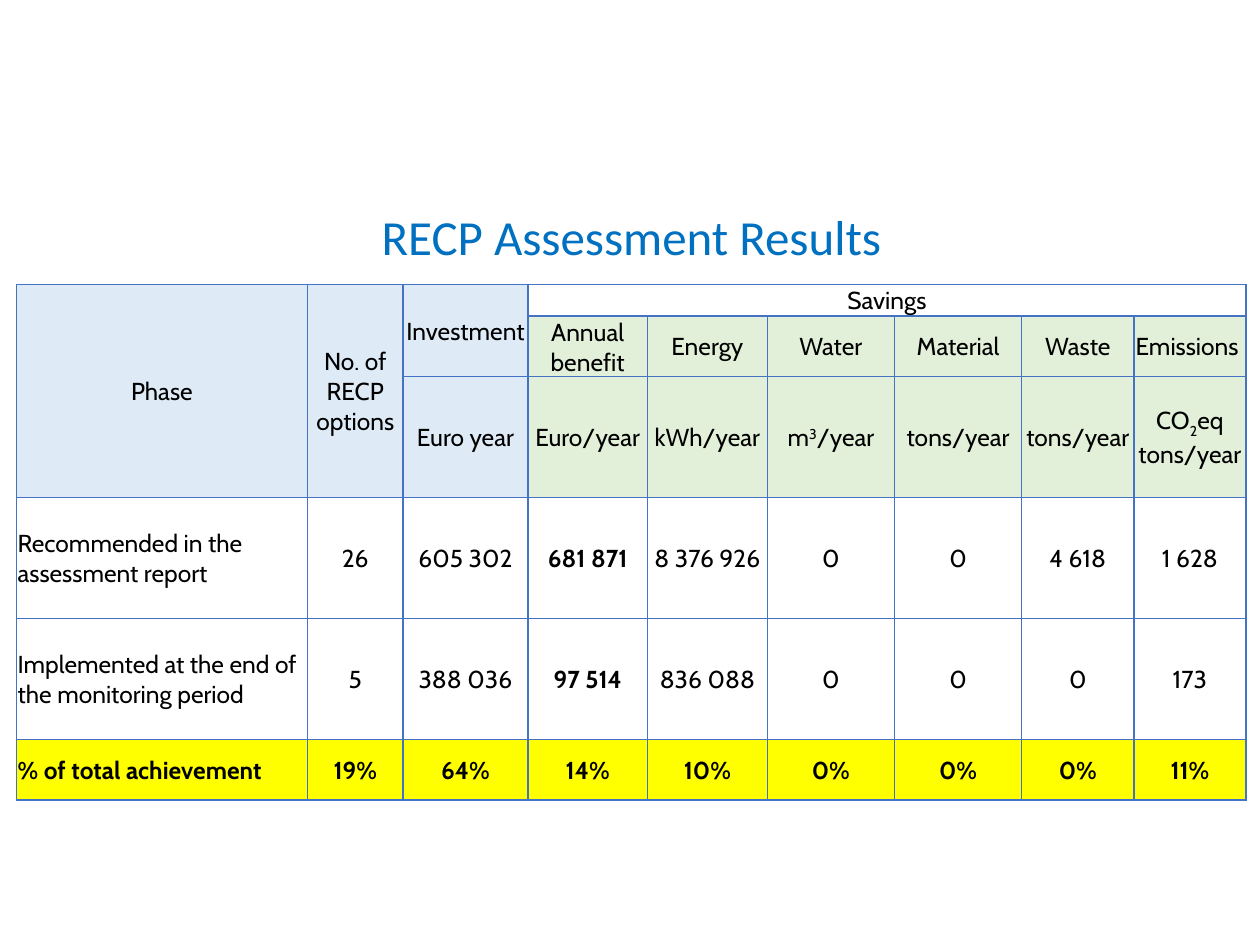
"""Build the RECP assessment results slide."""
from lxml import etree
from pptx import Presentation
from pptx.dml.color import RGBColor
from pptx.enum import text
from pptx.oxml import ns
from pptx.util import Inches, Pt

TITLE = "RECP Assessment Results"
ROWS = [
    ["Phase", "No. of RECP options", "Investment ", "Savings", "", "", "", "", ""],
    ["", "", "", "Annual benefit", "Energy", "Water", "Material", "Waste", "Emissions "],
    ["", "", "Euro year", "Euro/year", "kWh/year",
     [("m", 0), ("3", 30), ("/year", 0)], "tons/year", "tons/year",
     [("CO", 0), ("2", -25), ("eq tons/year", 0)]],
    ["Recommended in the assessment report", "26", "605 302", "681 871",
     "8 376 926", "0", "0", "4 618", "1 628"],
    ["Implemented at the end of the monitoring period", "5", "388 036", "97 514",
     "836 088", "0", "0", "0", "173"],
    ["% of total achievement", "19%", "64%", "14%", "10%", "0%", "0%", "0%", "11%"],
]
WIDTHS = [2.31, 0.76, 0.99, 0.95, 0.95, 1.01, 1.01, 0.89, 0.89]
HEIGHTS = [0.25, 0.48, 0.96, 0.96, 0.96, 0.48]
SPANS = [((0, 0), (2, 0)), ((0, 1), (2, 1)), ((0, 2), (1, 2)), ((0, 3), (0, 8))]
HEAD, LAST = 3, len(ROWS) - 1
BLUE, GREEN, YELLOW, EDGE = "DEEBF7", "E2F0D9", "FFFF00", "4472C4"
PAD = {"margin_left": 0.01, "margin_right": 0.01, "margin_top": 0.01, "margin_bottom": 0}
BODY = {"name": "Cabin", "size": Pt(14)}
HEADING = {"name": "Calibri", "size": Pt(28)}


def color(code):
    return RGBColor.from_string(code)


def write(par, parts, form, hue):
    for words, shift in parts:
        run = par.add_run()
        run.text = words
        for key, val in form.items():
            setattr(run.font, key, val)
        run.font.color.rgb = color(hue)
        if shift:
            run._r.get_or_add_rPr().set("baseline", str(shift * 1000))


def border(cell):
    props = cell._tc.get_or_add_tcPr()
    for side in ("lnL", "lnR", "lnT", "lnB"):
        line = etree.SubElement(props, ns.qn("a:" + side), w=str(Pt(1)))
        fill = etree.SubElement(line, ns.qn("a:solidFill"))
        etree.SubElement(fill, ns.qn("a:srgbClr"), val=EDGE)


def shade(row, col):
    if row == LAST:
        return YELLOW
    if row < HEAD and col < 3:
        return BLUE
    return GREEN if 0 < row < HEAD else None


def style(cell, row, col):
    border(cell)
    hue = shade(row, col)
    if hue:
        cell.fill.solid()
        cell.fill.fore_color.rgb = color(hue)
    else:
        cell.fill.background()
    for key, val in PAD.items():
        setattr(cell, key, Inches(val))
    top = (row, col) == (0, 3)
    cell.vertical_anchor = text.MSO_ANCHOR.TOP if top else text.MSO_ANCHOR.MIDDLE


def fill_table(slide):
    box = [Inches(n) for n in (0.13, 2.26, sum(WIDTHS), sum(HEIGHTS))]
    grid = slide.shapes.add_table(len(ROWS), len(WIDTHS), *box).table
    for col, wide in zip(grid.columns, WIDTHS):
        col.width = Inches(wide)
    for row, high in zip(grid.rows, HEIGHTS):
        row.height = Inches(high)
    for start, end in SPANS:
        grid.cell(*start).merge(grid.cell(*end))
    for r, line in enumerate(ROWS):
        for c, item in enumerate(line):
            cell = grid.cell(r, c)
            style(cell, r, c)
            par = cell.text_frame.paragraphs[0]
            left = c == 0 and r >= HEAD
            par.alignment = text.PP_ALIGN.LEFT if left else text.PP_ALIGN.CENTER
            par.font.size = BODY["size"]
            bold = r == LAST or (c == 3 and r >= HEAD)
            parts = [(item, 0)] if isinstance(item, str) else item
            if item:
                write(par, parts, {**BODY, "bold": bold}, "000000")


def add_title(slide):
    box = [Inches(n) for n in (0.7, 1.72, 8.62, 0.37)]
    frame = slide.shapes.add_textbox(*box).text_frame
    frame.word_wrap = True
    frame.vertical_anchor = text.MSO_ANCHOR.MIDDLE
    par = frame.paragraphs[0]
    par.alignment = text.PP_ALIGN.CENTER
    par.line_spacing = 0.9
    write(par, [(TITLE, 0)], HEADING, "0070C0")


def main():
    deck = Presentation()
    deck.slide_width, deck.slide_height = Inches(10), Inches(7.5)
    slide = deck.slides.add_slide(deck.slide_layouts[6])
    add_title(slide)
    fill_table(slide)
    deck.save("out.pptx")


if __name__ == "__main__":
    main()
